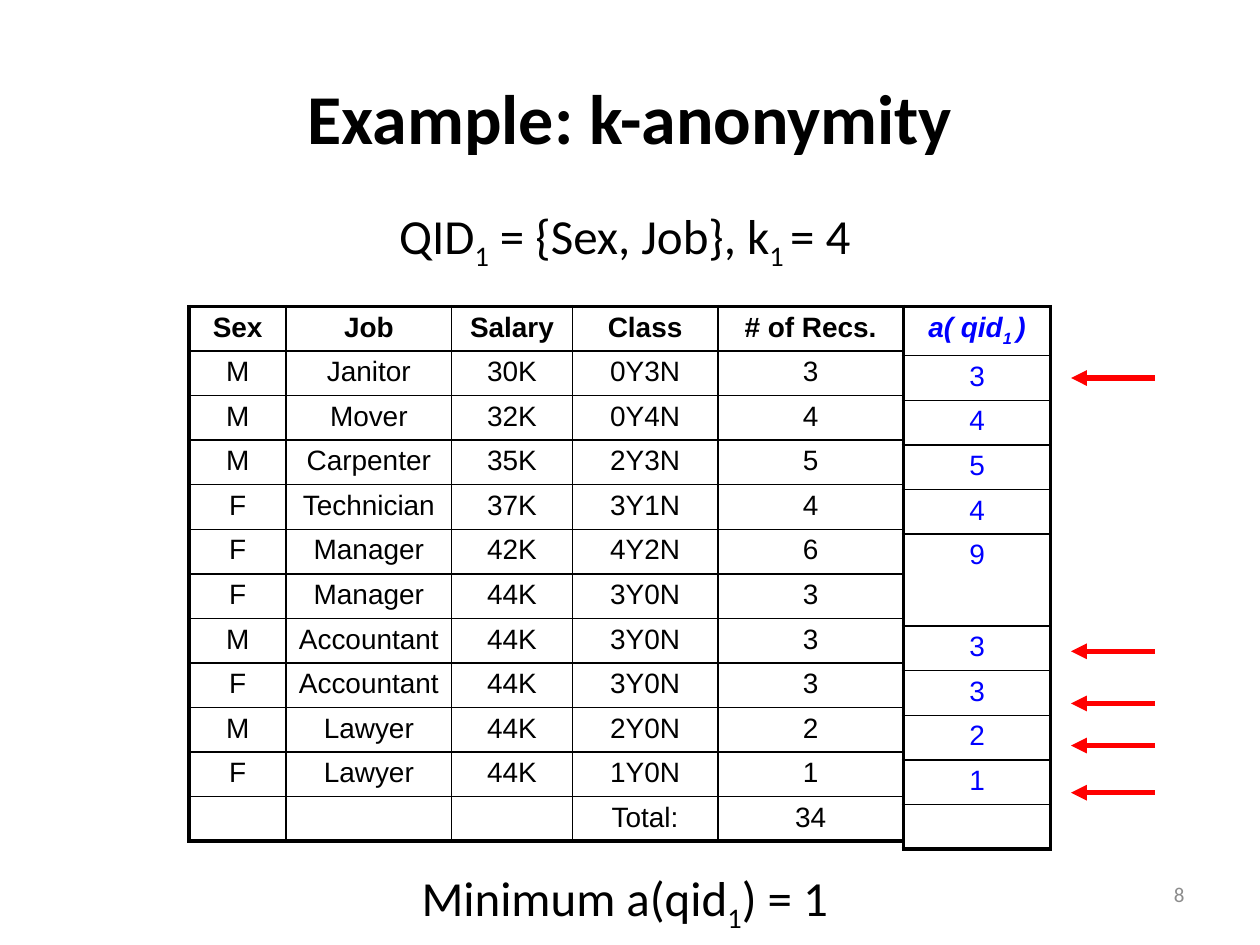
from lxml import etree
from pptx import Presentation
from pptx import util as u
from pptx.dml.color import RGBColor
from pptx.enum import shapes, text
from pptx.oxml import ns

COLORS = {"ink": "000000", "blue": "0000FF", "red": "FF0000", "gray": "8C8C8C"}
THIN, THICK = 1, 2.25
ROW_HEIGHT = 10.6 / 12

RECORDS = [
    ("Sex", "Job", "Salary", "Class", "# of Recs."),
    ("M", "Janitor", "30K", "0Y3N", "3"),
    ("M", "Mover", "32K", "0Y4N", "4"),
    ("M", "Carpenter", "35K", "2Y3N", "5"),
    ("F", "Technician", "37K", "3Y1N", "4"),
    ("F", "Manager", "42K", "4Y2N", "6"),
    ("F", "Manager", "44K", "3Y0N", "3"),
    ("M", "Accountant", "44K", "3Y0N", "3"),
    ("F", "Accountant", "44K", "3Y0N", "3"),
    ("M", "Lawyer", "44K", "2Y0N", "2"),
    ("F", "Lawyer", "44K", "1Y0N", "1"),
    ("", "", "", "Total:", "34"),
]
GROUP_SIZES = [(("a( qid", "1 ", ")"),)] + [(size,) for size in ("3", "4", "5", "4", "9", "3", "3", "2", "1", "")]


class SlideBuilder:
    def __init__(self, slide):
        self.slide = slide
        self.text_font = "Calibri"
        self.table_font = "Arial"

    def fill_paragraph(self, paragraph, parts, font, size, color, bold=False, italic=False,
                       align=text.PP_ALIGN.CENTER):
        paragraph.alignment = align
        paragraph.font.name = font
        paragraph.font.size = u.Pt(size)
        paragraph.font.bold = bold
        paragraph.font.italic = italic
        paragraph.font.color.rgb = RGBColor.from_string(COLORS[color])
        parts = (parts,) if isinstance(parts, str) else parts
        for index, part in enumerate(parts):
            if part:
                run = paragraph.add_run()
                run.text = part
                if index % 2:
                    run._r.get_or_add_rPr().set("baseline", "-25000")

    def text_box(self, parts, left, top, width, height, size, color="ink", bold=False,
                 align=text.PP_ALIGN.CENTER, anchor=text.MSO_ANCHOR.MIDDLE, space_before=0):
        shape = self.slide.shapes.add_textbox(u.Cm(left), u.Cm(top), u.Cm(width), u.Cm(height))
        frame = shape.text_frame
        frame.word_wrap = True
        frame.vertical_anchor = anchor
        paragraph = frame.paragraphs[0]
        paragraph.space_before = u.Pt(space_before)
        self.fill_paragraph(paragraph, parts, self.text_font, size, color, bold, align=align)

    def formula(self, parts, left, top, width):
        self.text_box(parts, left, top, width, 1.47, 28, anchor=text.MSO_ANCHOR.TOP, space_before=2.5)

    def borders(self, cell, widths):
        properties = cell._tc.get_or_add_tcPr()
        for index, (side, width) in enumerate(zip("LRTB", widths)):
            line = etree.Element(ns.qn(f"a:ln{side}"), w=str(u.Pt(width)))
            fill = etree.SubElement(line, ns.qn("a:solidFill"))
            etree.SubElement(fill, ns.qn("a:srgbClr"), val=COLORS["ink"])
            properties.insert(index, line)

    def table(self, rows, left, top, column_widths, row_heights, color="ink", italic_header=False):
        shape = self.slide.shapes.add_table(
            len(rows), len(column_widths), u.Cm(left), u.Cm(top),
            u.Cm(sum(column_widths)), u.Cm(sum(row_heights)))
        table = shape.table
        table.first_row = table.horz_banding = False
        for column, width in zip(table.columns, column_widths):
            column.width = u.Cm(width)
        last_row, last_column = len(rows) - 1, len(column_widths) - 1
        for r, (values, height) in enumerate(zip(rows, row_heights)):
            table.rows[r].height = u.Cm(height)
            for c, value in enumerate(values):
                cell = table.cell(r, c)
                cell.margin_left = cell.margin_right = u.Cm(0.2)
                cell.margin_top = cell.margin_bottom = u.Cm(0.11)
                cell.fill.background()
                self.fill_paragraph(cell.text_frame.paragraphs[0], value, self.table_font, 16, color,
                                    bold=r == 0, italic=r == 0 and italic_header)
                outer = (c == 0, c == last_column, r == 0, r == last_row)
                self.borders(cell, [THICK if edge else THIN for edge in outer])

    def arrow(self, start, end, y):
        connector = self.slide.shapes.add_connector(
            shapes.MSO_CONNECTOR.STRAIGHT, u.Cm(start), u.Cm(y), u.Cm(end), u.Cm(y))
        connector.line.color.rgb = RGBColor.from_string(COLORS["red"])
        connector.line.width = u.Pt(3)
        etree.SubElement(connector.line._get_or_add_ln(), ns.qn("a:tailEnd"), type="triangle")
        etree.SubElement(connector._element.spPr, ns.qn("a:effectLst"))


def main():
    presentation = Presentation()
    presentation.slide_width, presentation.slide_height = u.Cm(25.4), u.Cm(19.05)
    builder = SlideBuilder(presentation.slides.add_slide(presentation.slide_layouts[6]))

    builder.text_box("Example: k-anonymity", 1.27, 0.76, 22.86, 3.18, 40, bold=True)
    builder.formula(("QID", "1", " = {Sex, Job}, k", "1 ", "= 4"), 2.75, 4.02, 19.69)

    builder.table(RECORDS, 3.81, 6.18, [1.96, 3.33, 2.44, 2.93, 3.74], [ROW_HEIGHT] * len(RECORDS))
    group_heights = [0.97] + [ROW_HEIGHT] * 4 + [1.86] + [ROW_HEIGHT] * 5
    builder.table(GROUP_SIZES, 18.21, 6.18, [2.97], group_heights, color="blue", italic_header=True)

    builder.text_box("8", 18.21, 17.36, 5.92, 1.32, 12, color="gray", align=text.PP_ALIGN.RIGHT)
    builder.formula(("Minimum a(qid", "1", ") = 1"), 5.08, 17.36, 15.03)

    for y in (7.62, 13.13, 14.18, 15.03, 15.98):
        builder.arrow(23.28, 21.59, y)

    presentation.save("out.pptx")


if __name__ == "__main__":
    main()
